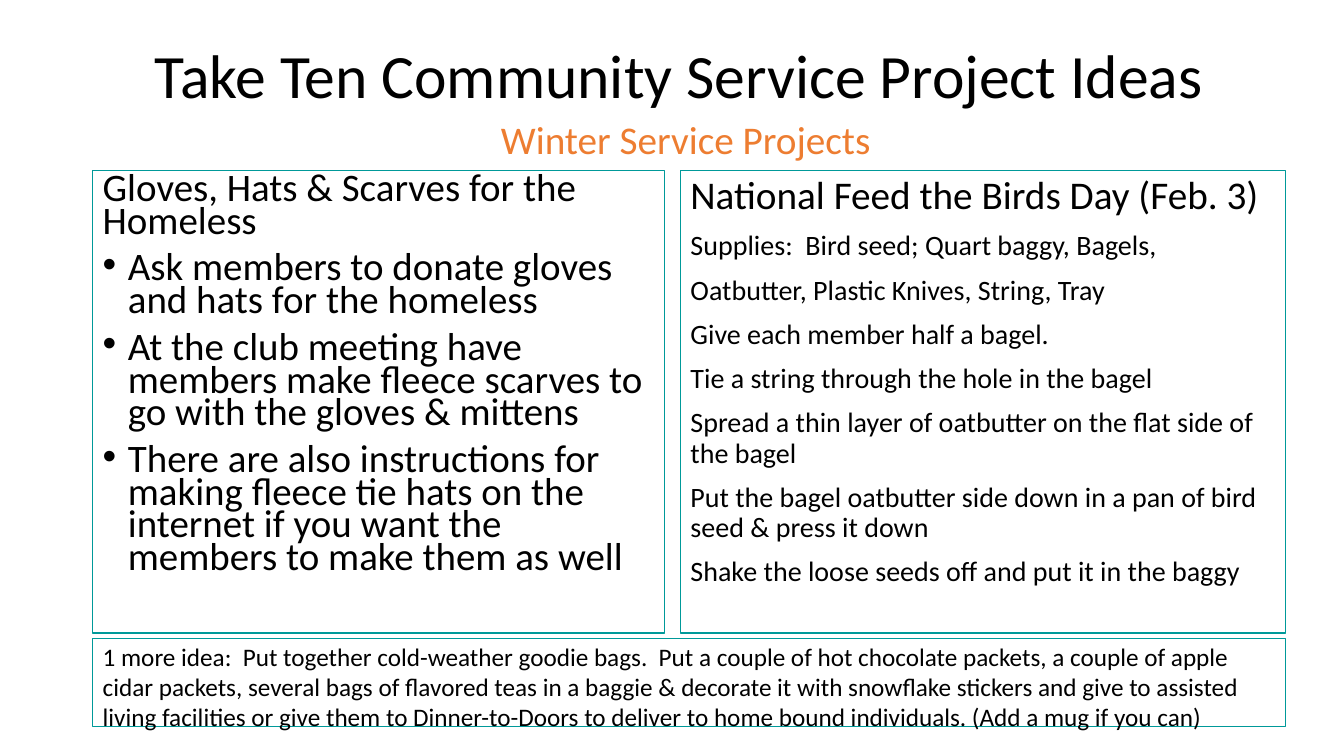
from lxml import etree
from pptx import Presentation
from pptx.dml.color import RGBColor
from pptx.enum.shapes import MSO_SHAPE
from pptx.enum.text import MSO_ANCHOR, PP_ALIGN
from pptx.oxml.ns import qn
from pptx.util import Inches, Pt

RECTANGLE = MSO_SHAPE.RECTANGLE
TOP, MIDDLE = MSO_ANCHOR.TOP, MSO_ANCHOR.MIDDLE
LEFT, CENTER = PP_ALIGN.LEFT, PP_ALIGN.CENTER

COLORS = {"text": "000000", "accent": "ED7D31", "frame": "009999"}
FONT = "Calibri"

TITLE = "Take Ten Community Service Project Ideas"
SUBTITLE = "Winter Service Projects"
GLOVES_HEADING = "Gloves, Hats & Scarves for the Homeless"
GLOVES_STEPS = [
    "Ask members to donate gloves and hats for the homeless",
    "At the club meeting have members make fleece scarves to go with the gloves & mittens",
    "There are also instructions for making fleece tie hats on the internet if you want "
    "the members to make them as well",
]
BIRDS_HEADING = "National Feed the Birds Day (Feb. 3)"
BIRDS_STEPS = [
    "Supplies:  Bird seed; Quart baggy, Bagels,",
    "Oatbutter, Plastic Knives, String, Tray",
    "Give each member half a bagel.",
    "Tie a string through the hole in the bagel",
    "Spread a thin layer of oatbutter on the flat side of the bagel",
    "Put the bagel oatbutter side down in a pan of bird seed & press it down",
    "Shake the loose seeds off and put it in the baggy",
]
MORE_IDEA = (
    "1 more idea:  Put together cold-weather goodie bags.  Put a couple of hot chocolate "
    "packets, a couple of apple cidar packets, several bags of flavored teas in a baggie & "
    "decorate it with snowflake stickers and give to assisted living facilities or give them "
    "to Dinner-to-Doors to deliver to home bound individuals. (Add a mug if you can)"
)

PAGE_WIDTH, PAGE_HEIGHT = 13.33, 7.5
MARGIN = 0.92
CONTENT_WIDTH = 11.83
CARD_TOP, CARD_HEIGHT = 1.69, 4.59
GLOVES_WIDTH, BIRDS_WIDTH = 5.67, 6
BIRDS_LEFT = MARGIN + CONTENT_WIDTH - BIRDS_WIDTH
BULLET_INDENT = 0.25


def add_frame(page, area):
    frame = page.shapes.add_shape(RECTANGLE, *map(Inches, area))
    frame.shadow.inherit = False
    frame.fill.background()
    frame.line.color.rgb = RGBColor.from_string(COLORS["frame"])
    frame.line.width = Pt(0.75)
    return frame


def add_bullet(para):
    properties = para._p.get_or_add_pPr()
    properties.set("marL", str(Inches(BULLET_INDENT)))
    properties.set("indent", str(-Inches(BULLET_INDENT)))
    etree.SubElement(properties, qn("a:buFont")).set("typeface", "Arial")
    etree.SubElement(properties, qn("a:buChar")).set("char", "•")


def write(box, lines, color="text", align=LEFT, anchor=TOP, spacing=None, before=0, shift=0):
    body = box.text_frame
    body.word_wrap = True
    body.vertical_anchor = anchor
    body.margin_left = Inches(0.1 + shift)
    for index, (text, size, bulleted) in enumerate(lines):
        para = body.add_paragraph() if index else body.paragraphs[0]
        para.text = text
        para.alignment = align
        para.line_spacing = spacing
        para.space_before = Pt(before)
        para.font.name = FONT
        para.font.size = Pt(size)
        para.font.color.rgb = RGBColor.from_string(COLORS[color])
        if bulleted:
            add_bullet(para)


def add_text(page, area, text, size, **style):
    box = page.shapes.add_textbox(*map(Inches, area))
    write(box, [(text, size, False)], **style)


def main():
    deck = Presentation()
    deck.slide_width, deck.slide_height = Inches(PAGE_WIDTH), Inches(PAGE_HEIGHT)
    page = deck.slides.add_slide(deck.slide_layouts[6])

    add_text(page, (MARGIN, 0.25, 11.5, 1.06), TITLE, 44,
             align=CENTER, anchor=MIDDLE, spacing=0.9, shift=0.14)

    gloves = [(GLOVES_HEADING, 27.8, False)] + [(step, 27.8, True) for step in GLOVES_STEPS]
    birds = [(BIRDS_HEADING, 28, False)] + [(step, 20, False) for step in BIRDS_STEPS]
    for left, width, lines, spacing in (
        (MARGIN, GLOVES_WIDTH, gloves, 0.7),
        (BIRDS_LEFT, BIRDS_WIDTH, birds, 0.9),
    ):
        card = add_frame(page, (left, CARD_TOP, width, CARD_HEIGHT))
        write(card, lines, spacing=spacing, before=10)

    add_text(page, (3.92, 1.09, 5.67, 0.57), SUBTITLE, 28,
             color="accent", align=CENTER, shift=0.09)
    add_frame(page, (MARGIN, 6.33, CONTENT_WIDTH, 0.88))
    add_text(page, (MARGIN, 6.31, CONTENT_WIDTH, 1.01), MORE_IDEA, 18)

    deck.save("out.pptx")


if __name__ == "__main__":
    main()
